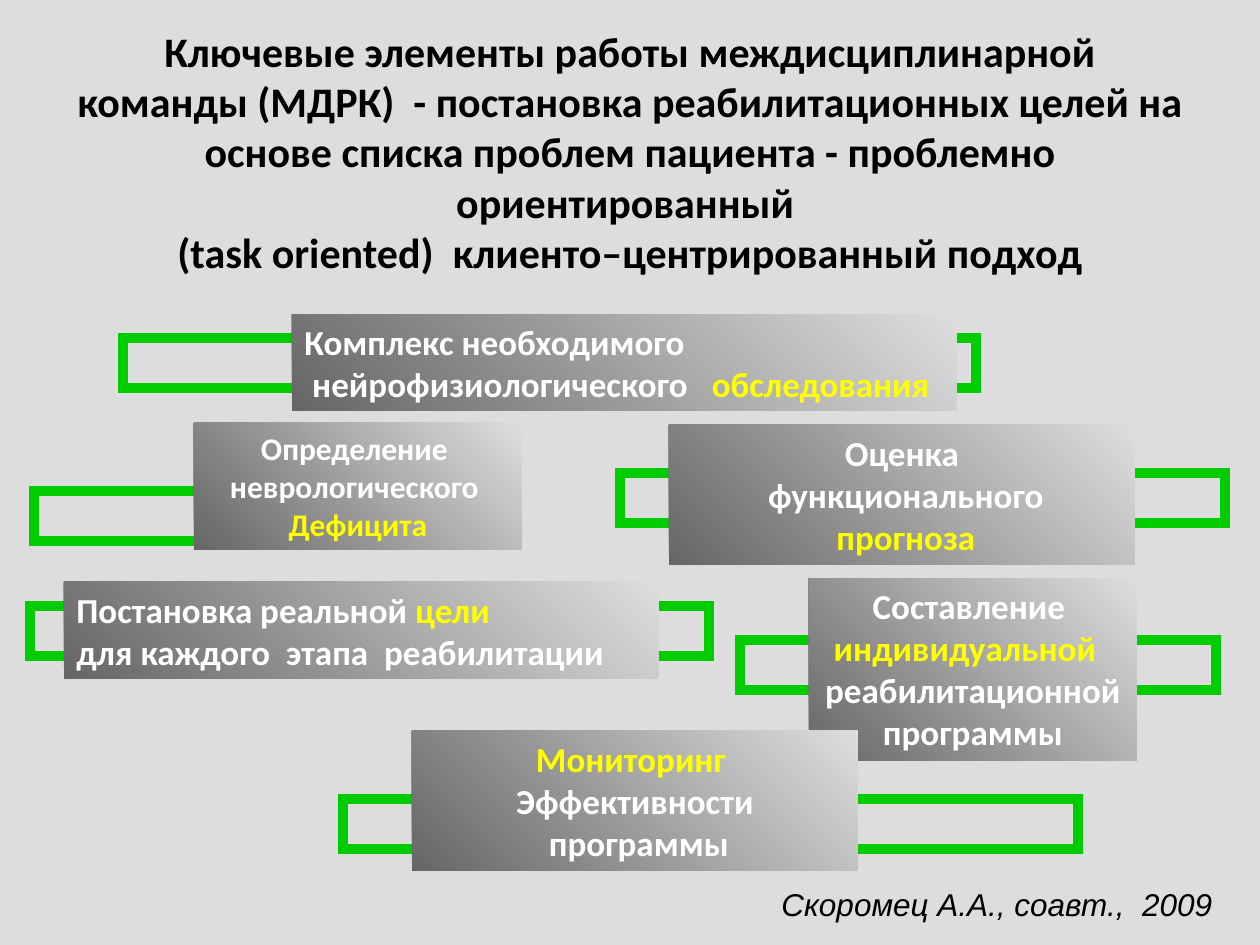
from dataclasses import dataclass

from lxml import etree
from pptx import Presentation
from pptx.dml.color import RGBColor
from pptx.enum.shapes import MSO_SHAPE
from pptx.enum.text import MSO_ANCHOR, PP_ALIGN
from pptx.oxml.ns import qn
from pptx.util import Emu, Pt

RECTANGLE = MSO_SHAPE.RECTANGLE
LEFT, CENTER = PP_ALIGN.LEFT, PP_ALIGN.CENTER
TOP, MIDDLE = MSO_ANCHOR.TOP, MSO_ANCHOR.MIDDLE

PX_PER_INCH = 126
COLORS = {
    "background": "DDDDDD",
    "gradient_dark": "666666",
    "gradient_light": "DDDDDD",
    "bar": "00CC00",
    "text": "FFFFFF",
    "accent": "FFFF00",
    "black": "000000",
}


@dataclass(frozen=True)
class Box:
    left: int
    top: int
    width: int
    height: int


@dataclass(frozen=True)
class Run:
    text: str
    color: str = "text"


@dataclass(frozen=True)
class Card:
    box: Box
    lines: list[list[Run]]
    align: int = CENTER
    size: int = 20


def px(length: int) -> Emu:
    return Emu(round(length * 914400 / PX_PER_INCH))


def place(box: Box) -> tuple[Emu, Emu, Emu, Emu]:
    return px(box.left), px(box.top), px(box.width), px(box.height)


def color(name: str) -> RGBColor:
    return RGBColor.from_string(COLORS[name])


def add_run(paragraph, run: Run, size: int, font: str = "Calibri",
            bold: bool = True, italic: bool = False) -> None:
    text_run = paragraph.add_run()
    text_run.text = run.text
    text_run.font.name = font
    text_run.font.size = Pt(size)
    text_run.font.bold = bold
    text_run.font.italic = italic
    text_run.font.color.rgb = color(run.color)


def add_bar(slide, box: Box) -> None:
    shape = slide.shapes.add_shape(RECTANGLE, *place(box))
    shape.shadow.inherit = False
    shape.fill.background()
    shape.line.color.rgb = color("bar")
    shape.line.width = Pt(6)
    # Square corners
    outline = shape.line._get_or_add_ln()
    etree.SubElement(outline, qn("a:miter")).set("lim", "800000")


def add_card(slide, card: Card) -> None:
    shape = slide.shapes.add_shape(RECTANGLE, *place(card.box))
    shape.shadow.inherit = False
    shape.line.fill.background()
    shape.fill.gradient()
    shape.fill.gradient_angle = 45
    stops = shape.fill.gradient_stops
    for stop, position, name in zip(stops, (0, 1), ("gradient_dark", "gradient_light")):
        stop.position = position
        stop.color.rgb = color(name)

    frame = shape.text_frame
    frame.word_wrap = True
    frame.vertical_anchor = TOP
    for index, line in enumerate(card.lines):
        paragraph = frame.add_paragraph() if index else frame.paragraphs[0]
        paragraph.alignment = card.align
        for run in line:
            add_run(paragraph, run, card.size)


def add_title(slide, box: Box, lines: list[str]) -> None:
    frame = slide.shapes.add_textbox(*place(box)).text_frame
    frame.word_wrap = True
    frame.vertical_anchor = MIDDLE
    frame.margin_bottom = px(56)  # lifts the title by half a line
    paragraph = frame.paragraphs[0]
    paragraph.alignment = CENTER
    for index, line in enumerate(lines):
        if index:
            paragraph.add_line_break()
        add_run(paragraph, Run(line, "black"), 24)


def add_citation(slide, box: Box, text: str) -> None:
    frame = slide.shapes.add_textbox(*place(box)).text_frame
    frame.word_wrap = False
    add_run(frame.paragraphs[0], Run(text, "black"), 18, "Arial", bold=False, italic=True)


TITLE = [
    "Ключевые элементы работы междисциплинарной команды (МДРК)  - постановка "
    "реабилитационных целей на основе списка проблем пациента - проблемно ориентированный ",
    "(task oriented)  клиенто–центрированный подход",
]

BAR_HEIGHT = 50
BARS = [
    Box(left, top, width, BAR_HEIGHT)
    for left, top, width in [
        (123, 338, 853), (620, 473, 605), (30, 606, 679),
        (34, 491, 328), (740, 640, 476), (343, 799, 735),
    ]
]

CARDS = [
    Card(Box(292, 314, 665, 97), [
        [Run("Комплекс необходимого")],
        [Run(" нейрофизиологического   "), Run("обследования", "accent")],
    ], align=LEFT),
    Card(Box(194, 423, 328, 127), [
        [Run("Определение ")],
        [Run("неврологического ")],
        [Run("Дефицита", "accent")],
    ], size=18),
    Card(Box(669, 425, 466, 140), [
        [Run("Оценка")],
        [Run(" функционального")],
        [Run(" прогноза", "accent")],
    ]),
    Card(Box(64, 582, 595, 97), [
        [Run("Постановка реальной "), Run("цели", "accent")],
        [Run("для каждого  этапа  реабилитации")],
    ], align=LEFT),
    Card(Box(809, 578, 328, 183), [
        [Run("Составление ")],
        [Run("индивидуальной  ", "accent")],
        [Run("реабилитационной ")],
        [Run("программы")],
    ]),
    Card(Box(412, 731, 446, 140), [
        [Run("Мониторинг ", "accent")],
        [Run("Эффективности")],
        [Run(" программы")],
    ]),
]


def main() -> None:
    presentation = Presentation()
    presentation.slide_width, presentation.slide_height = px(1260), px(945)
    slide = presentation.slides.add_slide(presentation.slide_layouts[6])
    slide.background.fill.solid()
    slide.background.fill.fore_color.rgb = color("background")

    add_title(slide, Box(63, 97, 1134, 158), TITLE)
    # Green bars lie behind the cards
    for bar in BARS:
        add_bar(slide, bar)
    for card in CARDS:
        add_card(slide, card)
    add_citation(slide, Box(769, 879, 460, 50), "Скоромец А.А., соавт.,  2009")

    presentation.save("out.pptx")


if __name__ == "__main__":
    main()
